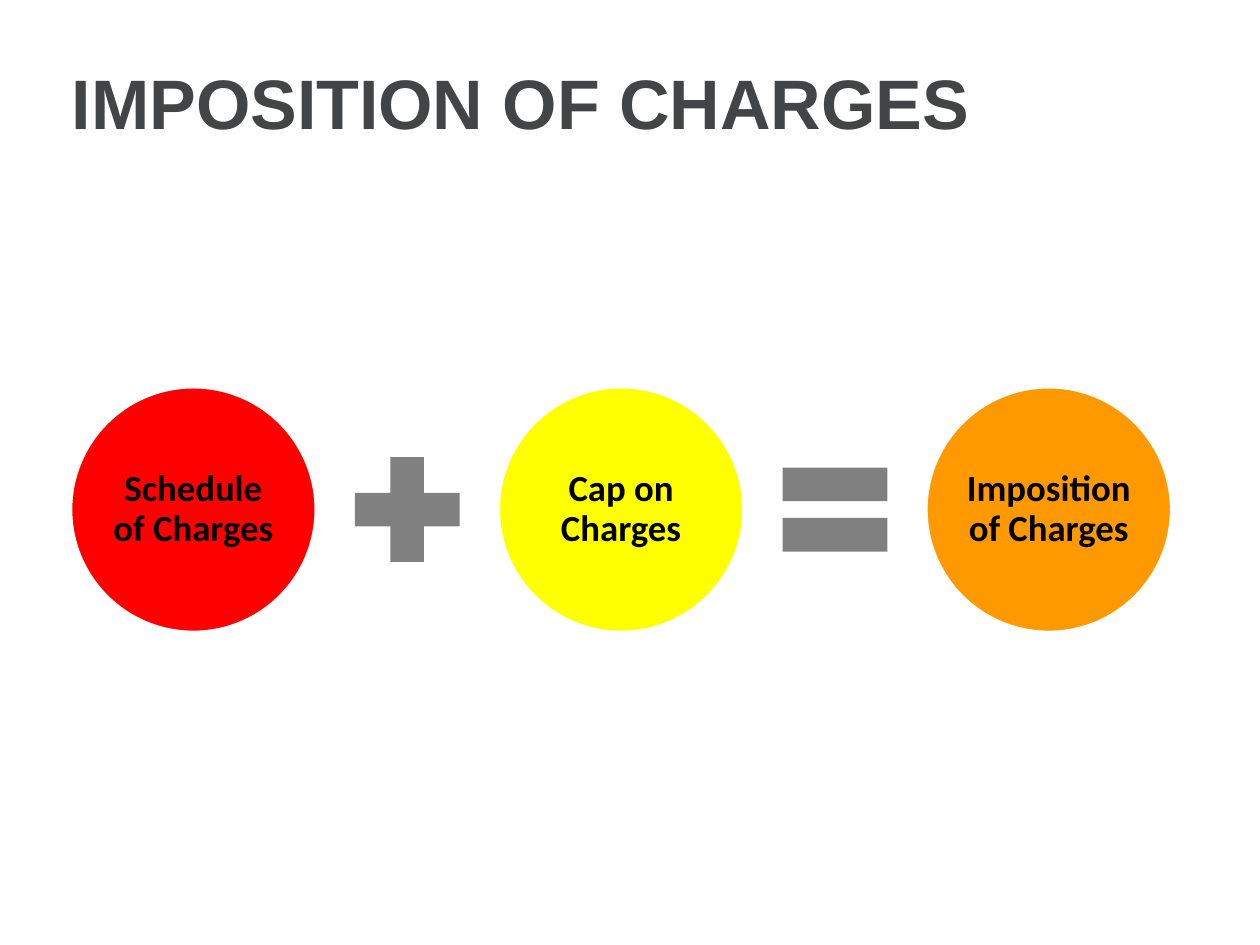
from pptx import Presentation
from pptx.dml.color import RGBColor
from pptx.enum.shapes import MSO_SHAPE as Kind
from pptx.enum.text import MSO_ANCHOR as Anchor, PP_ALIGN as Align
from pptx.util import Pt


def rgb(code):
    return RGBColor.from_string(code)


def write(frame, text, font, size, color, inset, align):
    frame.word_wrap = True
    frame.vertical_anchor = Anchor.MIDDLE
    frame.margin_left = frame.margin_right = Pt(inset)
    frame.margin_top = frame.margin_bottom = Pt(2)
    para = frame.paragraphs[0]
    para.alignment = align
    run = para.add_run()
    run.text = text
    run.font.name = font
    run.font.size = Pt(size)
    run.font.bold = True
    run.font.color.rgb = rgb(color)
    return para


def add_title(slide, left, top, width, height):
    box = slide.shapes.add_textbox(Pt(left), Pt(top), Pt(width), Pt(height))
    write(box.text_frame, "IMPOSITION OF CHARGES", "Arial", 40, "434445",
          7.2, Align.LEFT)


def add_form(slide, kind, left, mid, size, fill):
    form = slide.shapes.add_shape(
        kind, Pt(left), Pt(mid - size / 2), Pt(size), Pt(size))
    form.shadow.inherit = False
    form.fill.solid()
    form.fill.fore_color.rgb = rgb(fill)
    form.line.fill.background()
    return form


def add_sum(slide, left, top, width, height):
    terms = [("Schedule of Charges", "FF0000"),
             ("Cap on Charges", "FFFF00"),
             ("Imposition of Charges", "FF9900")]
    signs = [Kind.MATH_PLUS, Kind.MATH_EQUAL]
    disc, sign = height, height * 0.58
    step = (width - disc) / 2
    gap = (step - disc - sign) / 2
    mid = top + height / 2

    # Circles with their labels
    for i, (text, fill) in enumerate(terms):
        form = add_form(slide, Kind.OVAL, left + i * step, mid, disc, fill)
        form.line.color.rgb = rgb("FFFFFF")
        form.line.width = Pt(2)
        para = write(form.text_frame, text, "Calibri", 21, "000000",
                     2, Align.CENTER)
        para.line_spacing = 0.9

    # Signs between the circles
    for i, kind in enumerate(signs):
        add_form(slide, kind, left + i * step + disc + gap, mid, sign,
                 "808080")


def main():
    deck = Presentation()
    deck.slide_width, deck.slide_height = Pt(720), Pt(540)
    slide = deck.slides.add_slide(deck.slide_layouts[6])
    add_title(slide, 34, 27.4, 648, 61.2)
    add_sum(slide, 40.3, 221, 629.2, 140.4)
    deck.save("out.pptx")


if __name__ == "__main__":
    main()
